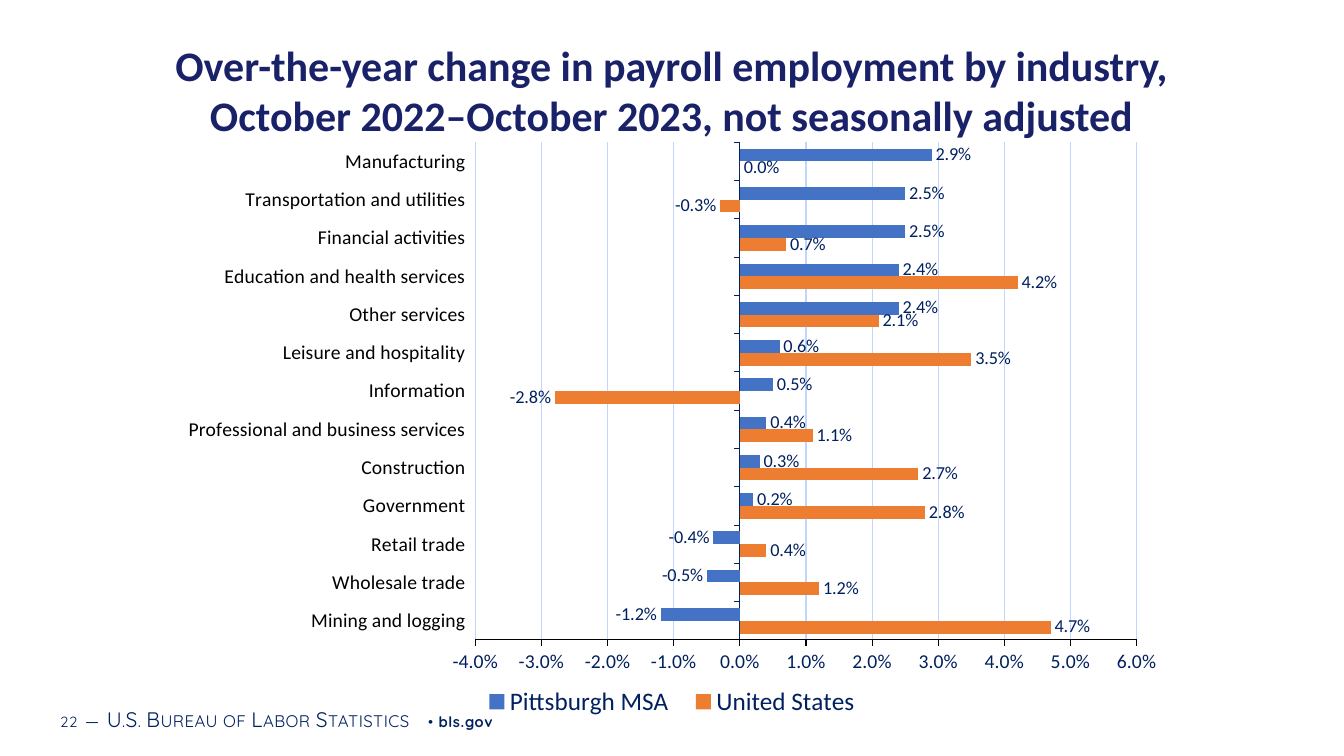
from lxml.etree import SubElement
from pptx import Presentation
from pptx.chart.data import CategoryChartData
from pptx.dml.color import RGBColor
from pptx.enum.chart import (XL_CHART_TYPE, XL_LABEL_POSITION, XL_LEGEND_POSITION,
                             XL_TICK_LABEL_POSITION, XL_TICK_MARK)
from pptx.enum.text import MSO_ANCHOR, PP_ALIGN
from pptx.oxml.ns import qn
from pptx.util import Pt

NAVY = RGBColor(0x00, 0x20, 0x60)
TITLE_BLUE = RGBColor(0x19, 0x21, 0x68)
BLACK = RGBColor(0x00, 0x00, 0x00)
GRID_BLUE = RGBColor(0xC1, 0xD6, 0xFF)
BLUE = RGBColor(0x44, 0x72, 0xC4)
ORANGE = RGBColor(0xED, 0x7D, 0x31)

TITLE_LINES = [
    "Over-the-year change in payroll employment by industry,",
    "October 2022–October 2023, not seasonally adjusted",
]

# Text, size, letter spacing in hundredths of a point, small caps, bold
FOOTER_RUNS = [
    ("22", 10.5, 50, False, False),
    (" ", 16, 50, False, False),
    ("—", 15, 30, True, False),
    (" ", 16, 50, False, False),
    ("U.S. Bureau of Labor Statistics", 15, 30, True, False),
    (" • ", 10.5, 50, False, False),
    ("bls.gov", 10.5, 50, False, True),
]

# Industry, United States, Pittsburgh MSA; listed from the bottom up
INDUSTRIES = [
    ("Mining and logging", 0.047, -0.012),
    ("Wholesale trade", 0.012, -0.005),
    ("Retail trade", 0.004, -0.004),
    ("Government", 0.028, 0.002),
    ("Construction", 0.027, 0.003),
    ("Professional and business services", 0.011, 0.004),
    ("Information", -0.028, 0.005),
    ("Leisure and hospitality", 0.035, 0.006),
    ("Other services", 0.021, 0.024),
    ("Education and health services", 0.042, 0.024),
    ("Financial activities", 0.007, 0.025),
    ("Transportation and utilities", -0.003, 0.025),
    ("Manufacturing", 0, 0.029),
]


def set_font(font, size, color, name="Calibri", bold=False):
    font.name = name
    font.size = Pt(size)
    font.bold = bold
    font.color.rgb = color


def set_line(line, color):
    line.color.rgb = color
    line.width = Pt(0.75)


def add_layout(parent, index, left, top, width, height, inner=False):
    """Place a chart part by fractions of the chart's size."""
    for old_layout in parent.findall(qn("c:layout")):
        parent.remove(old_layout)
    layout = SubElement(parent, qn("c:layout"))
    parent.insert(index, layout)
    manual = SubElement(layout, qn("c:manualLayout"))
    settings = [("layoutTarget", "inner")] if inner else []
    settings += [("xMode", "edge"), ("yMode", "edge"),
                 ("x", left), ("y", top), ("w", width), ("h", height)]
    for tag, value in settings:
        SubElement(manual, qn(f"c:{tag}")).set("val", str(value))


class EmploymentSlide:
    percent = "0.0%"

    def __init__(self, presentation):
        self.slide = presentation.slides.add_slide(presentation.slide_layouts[5])

    def add_title(self, lines):
        title = self.slide.shapes.title
        title.left, title.top, title.width, title.height = Pt(0), Pt(24.5), Pt(960), Pt(67)
        frame = title.text_frame
        frame.word_wrap = True
        frame.vertical_anchor = MSO_ANCHOR.TOP
        paragraph = frame.paragraphs[0]
        paragraph.alignment = PP_ALIGN.CENTER
        for number, line in enumerate(lines):
            if number:
                paragraph.add_line_break()
            run = paragraph.add_run()
            run.text = line
            set_font(run.font, 30, TITLE_BLUE, bold=True)

    def add_footer(self, runs):
        box = self.slide.shapes.add_textbox(Pt(38), Pt(499), Pt(610), Pt(29))
        frame = box.text_frame
        frame.word_wrap = True
        frame.vertical_anchor = MSO_ANCHOR.MIDDLE
        frame.margin_left = frame.margin_right = Pt(5)
        frame.margin_top = frame.margin_bottom = Pt(3)
        paragraph = frame.paragraphs[0]
        for text, size, spacing, small_caps, bold in runs:
            run = paragraph.add_run()
            run.text = text
            set_font(run.font, size, NAVY, "Quicksand", bold)
            properties = run.font._element
            properties.set("spc", str(spacing))
            if small_caps:
                properties.set("cap", "small")

    def add_chart(self, industries):
        names, national, local = zip(*industries)
        data = CategoryChartData(number_format=self.percent)
        data.categories = names
        data.add_series("United States", national)
        data.add_series("Pittsburgh MSA", local)
        chart = self.slide.shapes.add_chart(
            XL_CHART_TYPE.BAR_CLUSTERED, Pt(120), Pt(93), Pt(720), Pt(432), data).chart
        set_font(chart.font, 10, NAVY)
        chart.has_title = False
        plot_area = chart._chartSpace.chart.plotArea
        add_layout(plot_area, 0, 0.305, 0.02, 0.656, 0.823, inner=True)
        self.format_bars(chart.plots[0])
        self.format_axes(chart)
        self.format_legend(chart)

    def format_bars(self, plot):
        plot.gap_width = 100
        plot.vary_by_categories = False
        for series, color in zip(plot.series, (ORANGE, BLUE)):
            series.invert_if_negative = False
            series.format.fill.solid()
            series.format.fill.fore_color.rgb = color
            labels = series.data_labels
            labels.show_value = True
            labels.number_format = self.percent
            labels.number_format_is_linked = False
            labels.position = XL_LABEL_POSITION.OUTSIDE_END
            set_font(labels.font, 13, NAVY)

    def format_axes(self, chart):
        industry_axis, change_axis = chart.category_axis, chart.value_axis
        for axis, text_color, line_color in ((industry_axis, BLACK, NAVY),
                                             (change_axis, NAVY, BLACK)):
            axis.major_tick_mark = XL_TICK_MARK.OUTSIDE
            axis.minor_tick_mark = XL_TICK_MARK.NONE
            set_font(axis.tick_labels.font, 14, text_color)
            set_line(axis.format.line, line_color)
        industry_axis.tick_label_position = XL_TICK_LABEL_POSITION.LOW
        industry_axis.has_major_gridlines = False
        change_axis.minimum_scale = -0.04
        change_axis.maximum_scale = 0.06
        change_axis.major_unit = 0.01
        change_axis.tick_labels.number_format = self.percent
        change_axis.tick_labels.number_format_is_linked = False
        change_axis.has_major_gridlines = True
        set_line(change_axis.major_gridlines.format.line, GRID_BLUE)

    def format_legend(self, chart):
        chart.has_legend = True
        legend = chart.legend
        legend.position = XL_LEGEND_POSITION.BOTTOM
        legend.include_in_layout = False
        set_font(legend.font, 18, NAVY)
        add_layout(legend._element, 1, 0.3, 0.91, 0.4, 0.07)


def main():
    presentation = Presentation()
    presentation.slide_width = Pt(960)
    presentation.slide_height = Pt(540)
    slide = EmploymentSlide(presentation)
    slide.add_footer(FOOTER_RUNS)
    slide.add_title(TITLE_LINES)
    slide.add_chart(INDUSTRIES)
    presentation.save("out.pptx")


if __name__ == "__main__":
    main()
